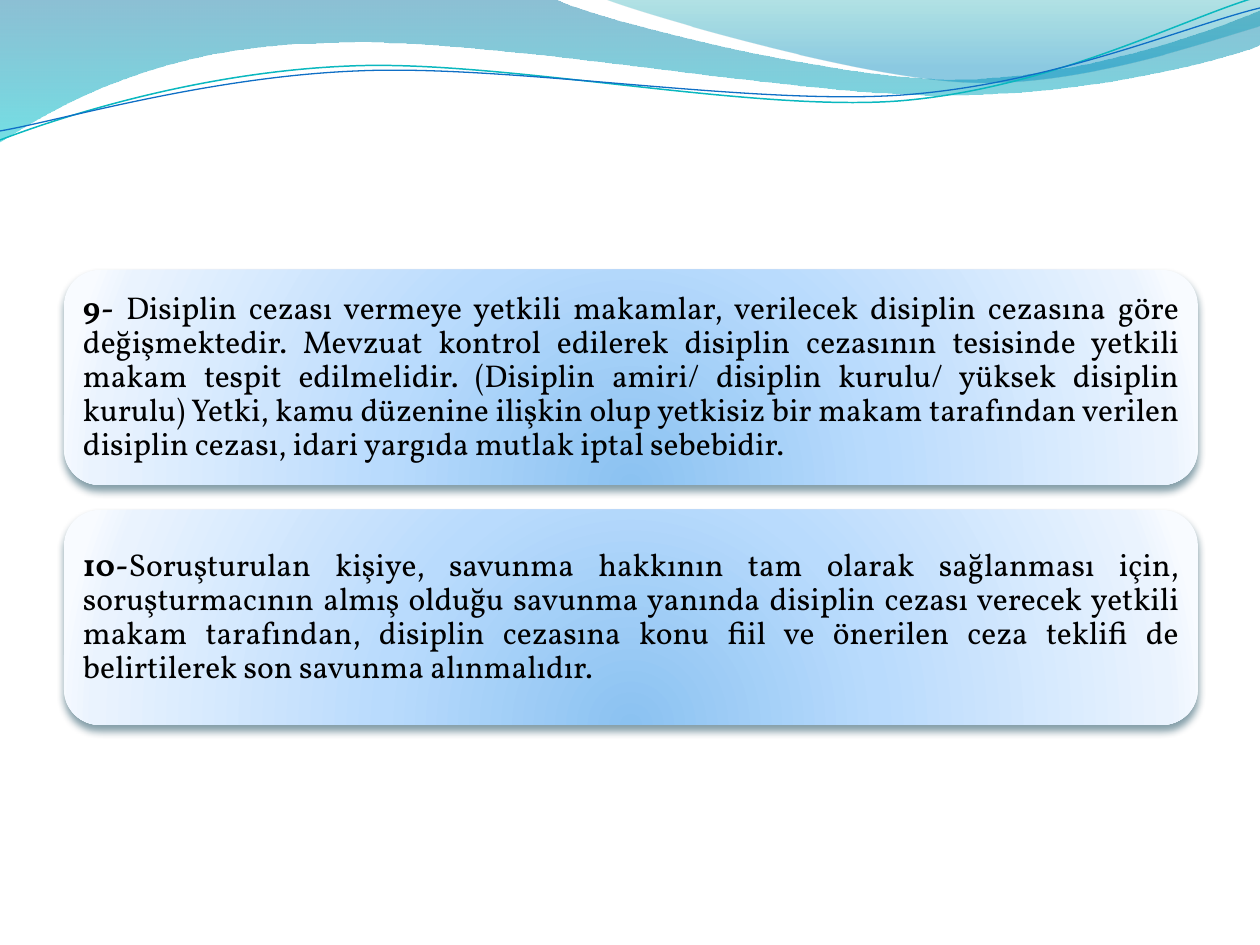
from lxml import etree
from pptx import Presentation
from pptx.dml.color import RGBColor
from pptx.enum.shapes import MSO_SHAPE
from pptx.enum.text import MSO_ANCHOR, PP_ALIGN
from pptx.oxml import parse_xml
from pptx.oxml.ns import nsdecls, qn
from pptx.util import Pt

SCALE = 914400 / 126
WIDTH, HEIGHT = 1260, 945
FONT = "Vollkorn"

BLACK = RGBColor(0x00, 0x00, 0x00)
TEAL = RGBColor(0x0A, 0xB8, 0xBF)
BLUE = RGBColor(0x0F, 0x6F, 0xC6)
SHADOW = RGBColor(0x00, 0x37, 0x4C)
WAVE_STOPS = [(0, RGBColor(0x00, 0x74, 0xA1), 45), (100, RGBColor(0x00, 0xC6, 0xCF), 55)]
CREST_STOPS = [(0, RGBColor(0x00, 0xA1, 0xA9), 30), (80, RGBColor(0x00, 0x8B, 0xBF), 45)]
CARD_STOPS = [
    (0, RGBColor(0x8B, 0xC2, 0xF1), 100),
    (43, RGBColor(0xB9, 0xDB, 0xFD), 100),
    (93, RGBColor(0xEA, 0xF3, 0xFE), 100),
    (100, RGBColor(0xF8, 0xFB, 0xFF), 100),
]
LINEAR_DOWN = '<a:lin ang="5400000" scaled="0"/>'
RADIAL_BELOW = (
    '<a:path path="circle"><a:fillToRect l="50000" t="130000" r="50000" b="-30000"/></a:path>'
)

WAVE = [
    [(0, -1)],
    [(554, -1)],
    [(600, 21), (837, 79), (955, 79)],
    [(1075, 79), (1207, 33), (1260, 11)],
    [(1261, 45)],
    [(1239, 55), (1096, 96), (940, 95)],
    [(784, 95), (481, 35), (324, 43)],
    [(163, 45), (58, 105), (-1, 142)],
]
CREST = [
    [(604, -1)],
    [(641, 14), (859, 78), (969, 82)],
    [(1079, 87), (1211, 40), (1260, 26)],
    [(1260, 0)],
]
TEAL_LINE = [
    [(0, 140)],
    [(60, 117), (199, 72), (349, 66)],
    [(498, 59), (747, 112), (898, 101)],
    [(1050, 89), (1182, 19), (1257, -3)],
]
BLUE_LINE = [
    [(0, 131)],
    [(59, 121), (207, 77), (357, 71)],
    [(508, 64), (752, 106), (903, 95)],
    [(1053, 84), (1186, 26), (1260, 8)],
]

CARD_LEFT, CARD_TOP, CARD_WIDTH, CARD_HEIGHT, CARD_PITCH = 64, 270, 1134, 215, 240
TEXT_OFFSET, TEXT_INSET = 10, 9
CARDS = [
    (
        "9-",
        " Disiplin cezası vermeye yetkili makamlar, verilecek disiplin cezasına göre "
        "değişmektedir. Mevzuat kontrol edilerek disiplin cezasının tesisinde yetkili "
        "makam tespit edilmelidir. (Disiplin amiri/ disiplin kurulu/ yüksek disiplin "
        "kurulu) Yetki, kamu düzenine ilişkin olup yetkisiz bir makam tarafından verilen "
        "disiplin cezası, idari yargıda mutlak iptal sebebidir.",
    ),
    (
        "10-",
        "Soruşturulan kişiye, savunma hakkının tam olarak sağlanması için, "
        "soruşturmacının almış olduğu savunma yanında disiplin cezası verecek yetkili "
        "makam tarafından, disiplin cezasına konu fiil ve önerilen ceza teklifi de "
        "belirtilerek son savunma alınmalıdır.",
    ),
]


def px(n):
    return round(n * SCALE)


def add_outline(s, segments, close):
    anchors = [(px(x), px(y)) for *_, (x, y) in segments]
    builder = s.shapes.build_freeform(*anchors[0])
    builder.add_line_segments(anchors[1:], close=close)
    sp = builder.convert_to_shape()
    lines = list(sp._element.iter(qn("a:lnTo")))
    for line, segment in zip(lines, segments[1:]):
        if len(segment) == 3:
            curve = etree.Element(qn("a:cubicBezTo"))
            for x, y in segment:
                etree.SubElement(curve, qn("a:pt"), x=str(px(x) - sp.left), y=str(px(y) - sp.top))
            line.getparent().replace(line, curve)
    sp.shadow.inherit = False
    sp.fill.background()
    return sp


def gradient_stop(pos, color, alpha):
    opacity = f'<a:alpha val="{alpha * 1000}"/>' if alpha < 100 else ""
    return f'<a:gs pos="{pos * 1000}"><a:srgbClr val="{color}">{opacity}</a:srgbClr></a:gs>'


def set_gradient(sp, stops, direction):
    gs = "".join(gradient_stop(*stop) for stop in stops)
    sp.fill.background()
    no_fill = sp._element.spPr.find(qn("a:noFill"))
    grad = parse_xml(
        f'<a:gradFill {nsdecls("a")} rotWithShape="1"><a:gsLst>{gs}</a:gsLst>{direction}</a:gradFill>'
    )
    no_fill.getparent().replace(no_fill, grad)


def set_shadow(sp):
    sp.shadow.inherit = False
    effects = sp._element.spPr.find(qn("a:effectLst"))
    outer = etree.SubElement(
        effects, qn("a:outerShdw"), blurRad=str(Pt(4.5)), dist=str(Pt(3)), dir="5400000", rotWithShape="0"
    )
    color = etree.SubElement(outer, qn("a:srgbClr"), val=str(SHADOW))
    etree.SubElement(color, qn("a:alpha"), val="48000")


def add_wave(s, segments, stops):
    sp = add_outline(s, segments, True)
    set_gradient(sp, stops, LINEAR_DOWN)
    sp.line.fill.background()


def add_curve(s, segments, color, width):
    sp = add_outline(s, segments, False)
    sp.line.color.rgb = color
    sp.line.width = Pt(width)


def add_card(s, top):
    sp = s.shapes.add_shape(
        MSO_SHAPE.ROUNDED_RECTANGLE, px(CARD_LEFT), px(top), px(CARD_WIDTH), px(CARD_HEIGHT)
    )
    set_gradient(sp, CARD_STOPS, RADIAL_BELOW)
    sp.line.fill.background()
    set_shadow(sp)


def add_card_text(s, top, number, text):
    tf = s.shapes.add_textbox(
        px(CARD_LEFT + TEXT_OFFSET),
        px(top + TEXT_OFFSET),
        px(CARD_WIDTH - 2 * TEXT_OFFSET),
        px(CARD_HEIGHT - 2 * TEXT_OFFSET),
    ).text_frame
    tf.word_wrap = True
    tf.vertical_anchor = MSO_ANCHOR.MIDDLE
    tf.margin_left = tf.margin_right = tf.margin_top = tf.margin_bottom = px(TEXT_INSET)
    p = tf.paragraphs[0]
    p.alignment = PP_ALIGN.JUSTIFY
    p.line_spacing = 0.9
    p.space_after = Pt(6)
    p.font.name = FONT
    p.font.size = Pt(18)
    p.font.color.rgb = BLACK
    for content, bold in ((number, True), (text, False)):
        r = p.add_run()
        r.text = content
        r.font.bold = bold


def main():
    prs = Presentation()
    prs.slide_width, prs.slide_height = px(WIDTH), px(HEIGHT)
    s = prs.slides.add_slide(prs.slide_layouts[6])
    add_wave(s, WAVE, WAVE_STOPS)
    add_wave(s, CREST, CREST_STOPS)
    add_curve(s, TEAL_LINE, TEAL, 0.85)
    add_curve(s, BLUE_LINE, BLUE, 0.75)
    for i, (number, text) in enumerate(CARDS):
        top = CARD_TOP + i * CARD_PITCH
        add_card(s, top)
        add_card_text(s, top, number, text)
    prs.save("out.pptx")


if __name__ == "__main__":
    main()
